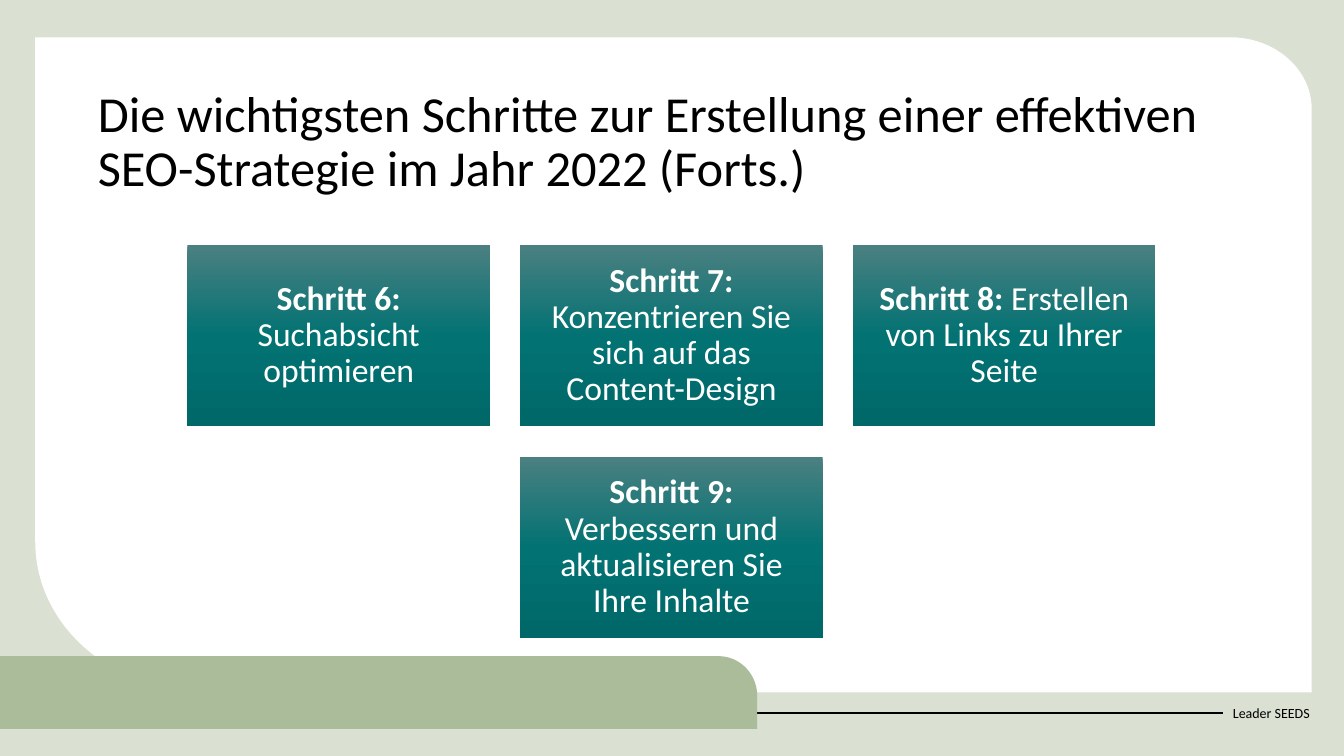
from copy import deepcopy
from dataclasses import dataclass

from pptx import Presentation
from pptx.dml.color import RGBColor
from pptx.enum.shapes import MSO_CONNECTOR, MSO_SHAPE
from pptx.enum.text import MSO_ANCHOR, MSO_AUTO_SIZE, PP_ALIGN
from pptx.oxml.ns import qn
from pptx.oxml.xmlchemy import OxmlElement
from pptx.util import Emu, Pt

RECTANGLE = MSO_SHAPE.RECTANGLE
STRAIGHT = MSO_CONNECTOR.STRAIGHT
LEFT, CENTER = PP_ALIGN.LEFT, PP_ALIGN.CENTER
TOP, MIDDLE = MSO_ANCHOR.TOP, MSO_ANCHOR.MIDDLE
NO_AUTOFIT = MSO_AUTO_SIZE.NONE
EMU_PER_PX = 9144
SLIDE_W, SLIDE_H = 1333, 750
LEFT_SIDE = 1
CURVE_STEPS = 24


@dataclass(frozen=True)
class Theme:
    font: str = "Calibri"
    backdrop: str = "DAE0D2"
    panel: str = "FFFFFF"
    tab: str = "AABC99"
    text: str = "000000"
    card_text: str = "FFFFFF"
    card_stops: tuple[str, ...] = ("4B8081", "037273", "006869")
    title_size: int = 36
    card_size: int = 24
    footer_size: int = 10


@dataclass(frozen=True)
class Step:
    label: str
    action: str


@dataclass(frozen=True)
class Curve:
    start: tuple[int, int]
    control_1: tuple[int, int]
    control_2: tuple[int, int]
    end: tuple[int, int]

    def points(self) -> list[tuple[float, float]]:
        result = []
        for i in range(CURVE_STEPS + 1):
            t = i / CURVE_STEPS
            weights = ((1 - t) ** 3, 3 * t * (1 - t) ** 2, 3 * t * t * (1 - t), t ** 3)
            knots = (self.start, self.control_1, self.control_2, self.end)
            result.append(tuple(sum(w * k[axis] for w, k in zip(weights, knots)) for axis in (0, 1)))
        return result


THEME = Theme()
TITLE = "Die wichtigsten Schritte zur Erstellung einer effektiven SEO-Strategie im Jahr 2022 (Forts.)"
ROWS = (
    (
        Step("Schritt 6: ", "Suchabsicht optimieren"),
        Step("Schritt 7: ", "Konzentrieren Sie sich auf das Content-Design"),
        Step("Schritt 8: ", "Erstellen von Links zu Ihrer Seite"),
    ),
    (Step("Schritt 9: ", "Verbessern und aktualisieren Sie Ihre Inhalte"),),
)
CARD_W, CARD_H, CARD_GAP, CARDS_TOP = 300, 180, 30, 243
PANEL = (
    (35, 37),
    Curve((1220, 37), (1265, 37), (1301, 69), (1301, 108)),
    (1301, 687),
    Curve((205, 687), (111, 687), (35, 620), (35, 538)),
)
TAB = (
    (0, 723),
    (0, 651),
    Curve((713, 651), (734, 651), (751, 669), (751, 690)),
    (751, 723),
)


def px(value: float) -> Emu:
    return Emu(round(value * EMU_PER_PX))


def box(*values: int) -> tuple[Emu, ...]:
    return tuple(px(v) for v in values)


def rgb(color: str) -> RGBColor:
    return RGBColor.from_string(color)


def add_text(p, text: str, *, size: int, color: str, bold: bool = False) -> None:
    r = p.add_run()
    r.text = text
    r.font.name = THEME.font
    r.font.size = Pt(size)
    r.font.bold = bold
    r.font.color.rgb = rgb(color)


def paint(sp, color: str) -> None:
    sp.shadow.inherit = False
    sp.fill.solid()
    sp.fill.fore_color.rgb = rgb(color)
    sp.line.fill.background()


def add_outline(shapes, parts: tuple, color: str) -> None:
    points = []
    for part in parts:
        points += part.points() if isinstance(part, Curve) else [part]
    scaled = [(round(x * EMU_PER_PX), round(y * EMU_PER_PX)) for x, y in points]
    builder = shapes.build_freeform(*scaled[0], scale=1.0)
    builder.add_line_segments(scaled[1:], close=True)
    paint(builder.convert_to_shape(), color)


def paint_gradient(sp, colors: tuple[str, ...]) -> None:
    sp.shadow.inherit = False
    sp.line.fill.background()
    sp.fill.gradient()
    sp.fill.gradient_angle = 270
    stop_list = next(sp._element.iter(qn("a:gsLst")))
    stop_list.insert(1, deepcopy(stop_list[0]))
    for i, (stop, color) in enumerate(zip(sp.fill.gradient_stops, colors)):
        stop.position = i / (len(colors) - 1)
        stop.color.rgb = rgb(color)


def add_card(shapes, step: Step, left: int, top: int) -> None:
    sp = shapes.add_shape(RECTANGLE, *box(left, top, CARD_W, CARD_H))
    paint_gradient(sp, THEME.card_stops)
    tf = sp.text_frame
    tf.word_wrap = True
    tf.vertical_anchor = MIDDLE
    tf.margin_left = tf.margin_right = tf.margin_top = tf.margin_bottom = px(10)
    p = tf.paragraphs[0]
    p.alignment = CENTER
    p.line_spacing = 0.9
    add_text(p, step.label, size=THEME.card_size, color=THEME.card_text, bold=True)
    add_text(p, step.action, size=THEME.card_size, color=THEME.card_text)


def add_cards(shapes) -> None:
    for row, steps in enumerate(ROWS):
        row_w = len(steps) * (CARD_W + CARD_GAP) - CARD_GAP
        left = (SLIDE_W - row_w) // 2
        top = CARDS_TOP + row * (CARD_H + CARD_GAP)
        for column, step in enumerate(steps):
            add_card(shapes, step, left + column * (CARD_W + CARD_GAP), top)


def add_footer(shapes) -> None:
    label = shapes.add_textbox(*box(1213, 687, 101, 40))
    tf = label.text_frame
    tf.word_wrap = True
    tf.vertical_anchor = MIDDLE
    add_text(tf.paragraphs[0], "Leader SEEDS", size=THEME.footer_size, color=THEME.text)
    rule = shapes.add_connector(STRAIGHT, *box(0, 707, 1213, 707))
    rule.end_connect(label, LEFT_SIDE)
    rule.line.color.rgb = rgb(THEME.text)
    rule.line.width = Pt(1.5)
    rule._element.spPr.append(OxmlElement("a:effectLst"))


def format_title(shapes) -> None:
    title = shapes.title
    title.left, title.top, title.width, title.height = box(87, 83, 1159, 88)
    tf = title.text_frame
    tf.word_wrap = True
    tf.auto_size = NO_AUTOFIT
    tf.vertical_anchor = TOP
    p = tf.paragraphs[0]
    p.alignment = LEFT
    p.line_spacing = 0.9
    p.space_before = Pt(0)
    add_text(p, TITLE, size=THEME.title_size, color=THEME.text)
    shapes._spTree.append(title._element)


def main() -> None:
    prs = Presentation()
    prs.slide_width, prs.slide_height = box(SLIDE_W, SLIDE_H)
    shapes = prs.slides.add_slide(prs.slide_layouts.get_by_name("Title Only")).shapes
    paint(shapes.add_shape(RECTANGLE, *box(0, 0, SLIDE_W, SLIDE_H)), THEME.backdrop)
    add_outline(shapes, PANEL, THEME.panel)
    add_footer(shapes)
    add_outline(shapes, TAB, THEME.tab)
    format_title(shapes)
    add_cards(shapes)
    prs.save("out.pptx")


if __name__ == "__main__":
    main()
